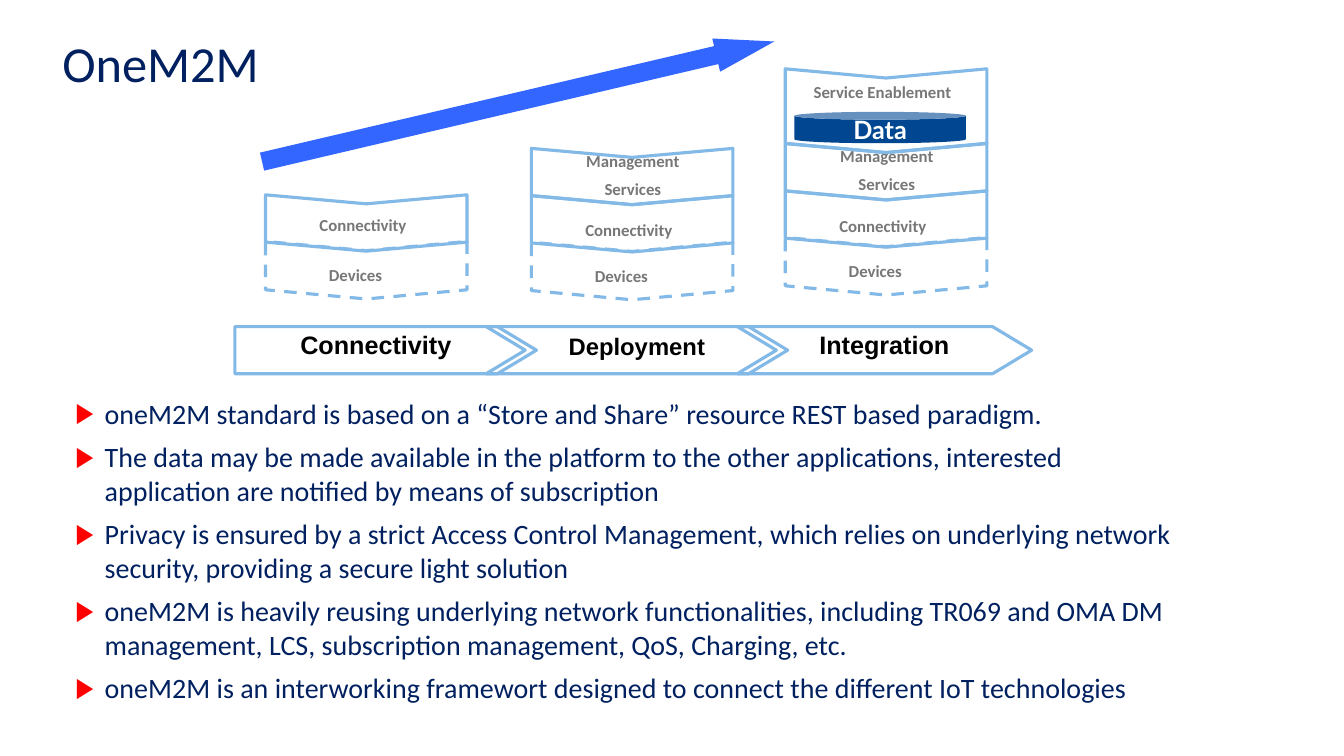
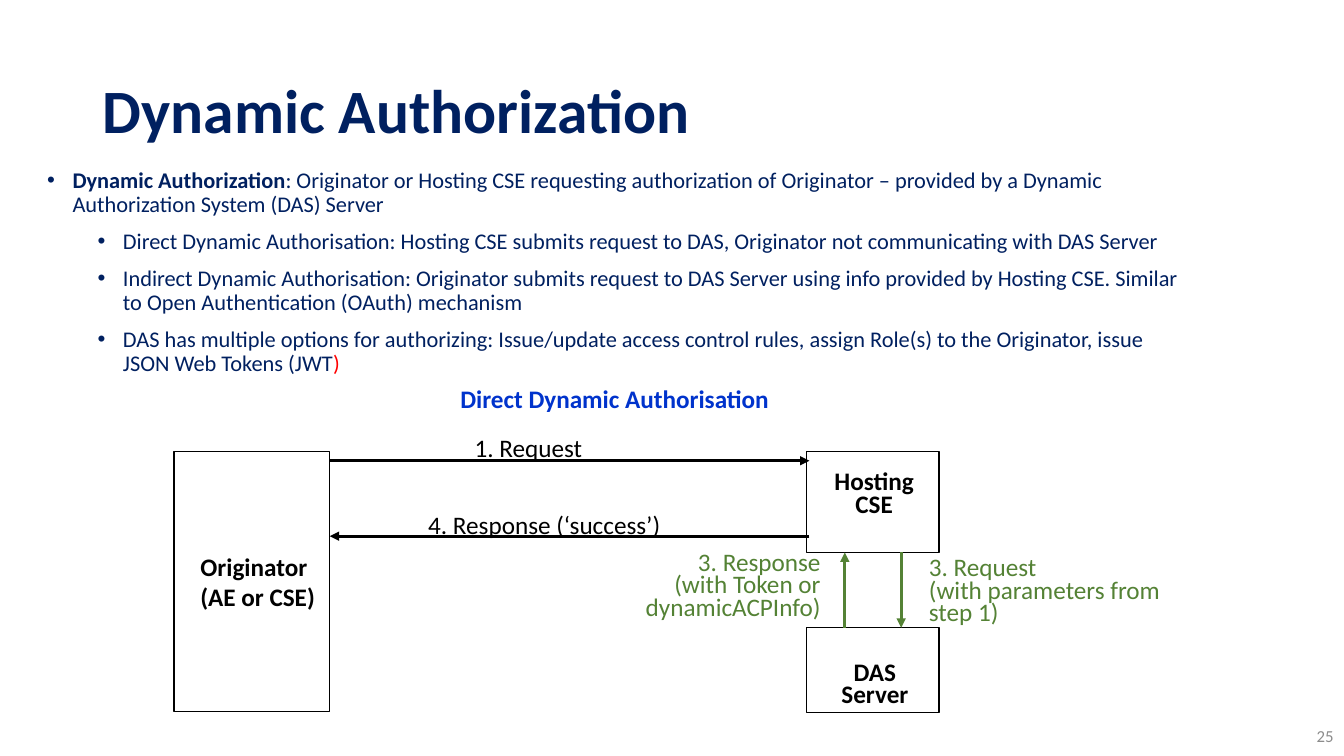
from pptx import Presentation
from pptx.dml.color import RGBColor as RGB
from pptx.enum.dml import MSO_LINE
from pptx.enum.shapes import MSO_CONNECTOR, MSO_SHAPE as SHAPE
from pptx.enum.text import MSO_ANCHOR as ANCHOR, PP_ALIGN as ALIGN
from pptx.oxml.ns import qn
from pptx.util import Cm, Pt
from lxml.etree import SubElement

NAVY = RGB(0x00, 0x20, 0x60)
SKY = RGB(0x82, 0xB9, 0xE6)
GRAY = RGB(0x77, 0x77, 0x77)
PALE = RGB(0x8C, 0x8C, 0x8C)
BLUE = RGB(0x33, 0x66, 0xFF)
DEEP = RGB(0x00, 0x46, 0x91)
ROYAL = RGB(0x00, 0x33, 0xCC)
GREEN = RGB(0x54, 0x82, 0x35)
RED = RGB(0xFF, 0x00, 0x00)
BLACK = RGB(0x00, 0x00, 0x00)
WHITE = RGB(0xFF, 0xFF, 0xFF)

# Text styles
TITLE = dict(size=Pt(36), color=NAVY)
BODY = dict(size=Pt(20), color=NAVY)
NOTE = dict(size=Pt(16), color=NAVY)
LABEL = dict(size=Pt(12), color=GRAY, bold=True)
STEP = dict(size=Pt(18), color=BLACK, bold=True, name="Arial")
CAN = dict(size=Pt(18), color=WHITE, bold=True, name="Lato")
PLAIN = dict(size=Pt(18), color=BLACK)
STRONG = dict(PLAIN, bold=True)
FLOW = dict(PLAIN, color=GREEN)
PAGE = dict(size=Pt(12), color=PALE)

MID = dict(alignment=ALIGN.CENTER)
SNUG = dict(MID, line_spacing=Pt(14), space_before=Pt(3), space_after=Pt(3))
DENSE = dict(line_spacing=Pt(16))

# Slide 1 content
POINTS = [
    "oneM2M standard is based on a “Store and Share” resource REST based paradigm.",
    "The data may be made available in the platform to the other applications, "
    "interested application are notified by means of subscription",
    "Privacy is ensured by a strict Access Control Management, which relies on "
    "underlying network security, providing a secure light solution",
    "oneM2M is heavily reusing underlying network functionalities, including TR069 "
    "and OMA DM management, LCS, subscription management, QoS, Charging, etc.",
    "oneM2M is an interworking framewort designed to connect the different IoT "
    "technologies",
]
# lines, rise above the lowest layer, height, notch, label shift x and y, label width
LAYERS = [
    (["Devices"], 0, 1.45, 0.16, -0.27, 0.12, 6.3),
    (["Connectivity"], 1.19, 1.42, 0.16, -0.08, 0.17, 4.9),
    (["Management", "Services"], 2.38, 1.42, 0.16, 0.02, -0.04, 4.65),
    (["Service Enablement"], 3.92, 2.11, 0.11, -0.09, -0.48, 6.27),
]
# centre x, centre y of the lowest layer, number of layers
STACKS = [(9.23, 6.81, 2), (15.93, 6.83, 3), (22.33, 6.71, 4)]
STEPS = [
    ("Connectivity", SHAPE.PENTAGON, 7.6, 18),
    ("Deployment", SHAPE.CHEVRON, 7.6, 17),
    ("Integration", SHAPE.CHEVRON, 7.42, 18),
]

# Slide 2 content: level and runs
NOTES = [
    (0, [("Dynamic Authorization", dict(bold=True)),
         (": Originator or Hosting CSE requesting authorization of Originator – "
          "provided by a Dynamic Authorization System (DAS) Server", {})]),
    (1, "Direct Dynamic Authorisation: Hosting CSE submits request to DAS, "
        "Originator not communicating with DAS Server"),
    (1, "Indirect Dynamic Authorisation: Originator submits request to DAS Server "
        "using info provided by Hosting CSE. Similar to Open Authentication (OAuth) "
        "mechanism"),
    (1, [("DAS has multiple options for authorizing: Issue/update access control "
          "rules, assign Role(s) to the Originator, issue JSON Web Tokens (JWT", {}),
         (")", dict(color=RED))]),
]
BOXES = [
    (4.39, 11.38, 3.91, 6.55),
    (20.32, 11.38, 3.35, 2.54),
    (20.32, 15.82, 3.35, 2.13),
]
# place, lines, font, paragraph format, wrap
TEXTS = [
    ((11.35, 9.53, 8.36, 1.02), ["Direct Dynamic Authorisation"],
     dict(STRONG, color=ROYAL), {}, False),
    ((4.8, 13.77, 3.5, 1.8), ["Originator", "(AE or CSE)"], STRONG, {}, False),
    ((20.53, 11.81, 3, 1.42), ["Hosting", "CSE"], STRONG, {**MID, **DENSE}, False),
    ((20.55, 16.61, 3, 1.42), ["DAS", "Server"], STRONG, {**MID, **DENSE}, False),
    ((11.71, 10.77, 3.38, 1.02), ["1. Request"], PLAIN, {}, False),
    ((10.54, 12.7, 6.5, 1.02), ["4. Response (‘success’)"], PLAIN, {}, False),
    ((23.16, 13.97, 6.99, 1.96), ["3. Request", "(with parameters from step 1)"],
     FLOW, DENSE, True),
    ((13.18, 13.84, 7.75, 1.98), ["3. Response", "(with Token or dynamicACPInfo)"],
     FLOW, dict(DENSE, alignment=ALIGN.RIGHT), True),
]
# start and tip of each arrow
ARROWS = [
    (8.31, 11.61, 20.4, 11.61, BLACK),
    (20.4, 13.51, 8.31, 13.51, BLACK),
    (22.71, 13.92, 22.71, 15.82, GREEN),
    (21.29, 15.82, 21.29, 13.92, GREEN),
]


def bullet(para, mark, left, hang, color=None):
    props = para._p.get_or_add_pPr()
    props.set("marL", str(Cm(left)))
    props.set("indent", str(-Cm(hang)))
    if color is not None:
        tint = SubElement(props, qn("a:buClr"))
        SubElement(tint, qn("a:srgbClr"), val=str(color))
    SubElement(props, qn("a:buFont"), typeface="Arial")
    SubElement(props, qn("a:buChar"), char=mark)


def write(shape, lines, font, form={}, anchor=ANCHOR.TOP, wrap=True, mark=None):
    """Fill a shape; a line is text, or a level with text or runs."""
    frame = shape.text_frame
    frame.word_wrap, frame.vertical_anchor = wrap, anchor
    for num, line in enumerate(lines):
        para = frame.add_paragraph() if num else frame.paragraphs[0]
        level, runs = line if isinstance(line, tuple) else (0, line)
        para.level = level
        if mark:
            bullet(para, **mark[level])
        for key, value in form.items():
            if num or key != "space_before":
                setattr(para, key, value)
        for text, extra in [(runs, {})] if isinstance(runs, str) else runs:
            run = para.add_run()
            run.text = text
            for key, value in {"name": "Calibri", **font, **extra}.items():
                if key == "color":
                    run.font.color.rgb = value
                else:
                    setattr(run.font, key, value)


def put(slide, place, *args, **kw):
    write(slide.shapes.add_textbox(*map(Cm, place)), *args, **kw)


def draw(slide, kind, place, fill=None, line=None, width=2.25, adjust=(), turn=0):
    shape = slide.shapes.add_shape(kind, *map(Cm, place))
    shape.shadow.inherit = False
    shape.rotation = turn
    for num, value in enumerate(adjust):
        shape.adjustments[num] = value
    for part, color in ((shape.fill, fill), (shape.line.fill, line)):
        if color is None:
            part.background()
        else:
            part.solid()
            part.fore_color.rgb = color
    if line is not None:
        shape.line.width = Pt(width)
    return shape


def around(x, y, w, h):
    return x - w / 2, y - h / 2, w, h


def title(slide, place, text, anchor, **extra):
    put(slide, place, [text], {**TITLE, **extra}, dict(line_spacing=0.9), anchor)


def arrow(slide, x1, y1, x2, y2, color):
    link = slide.shapes.add_connector(MSO_CONNECTOR.STRAIGHT,
                                      *map(Cm, (x1, y1, x2, y2)))
    link.line.color.rgb = color
    link.line.width = Pt(2.25)
    SubElement(link.line._get_or_add_ln(), qn("a:tailEnd"), type="triangle")
    SubElement(link._element.spPr, qn("a:effectLst"))


def growth(slide):
    title(slide, (1.32, 0.64, 20.57, 1.83), "OneM2M", ANCHOR.BOTTOM)

    # Layer stacks
    for x, base, count in STACKS:
        for num, layer in enumerate(LAYERS[:count]):
            lines, rise, high, notch, dx, dy, wide = layer
            y = base - rise
            tile = draw(slide, SHAPE.CHEVRON, around(x, y, high, 5.08), line=SKY,
                        adjust=[notch], turn=90)
            if num == 0:
                tile.line.dash_style = MSO_LINE.DASH
            if num == 1 and count == 2:
                dy = 0.05
            put(slide, around(x + dx, y + dy, wide, 0.8), lines, LABEL, SNUG,
                ANCHOR.MIDDLE)
    can = draw(slide, SHAPE.CAN, (20.02, 2.82, 4.32, 0.79), fill=DEEP, adjust=[0.25])
    write(can, ["Data"], CAN, MID, ANCHOR.MIDDLE, False)

    # Row of steps and rising arrow
    for num, (text, kind, wide, size) in enumerate(STEPS):
        step = draw(slide, kind, (5.92 + 6.33 * num, 8.23, wide, 1.19), line=SKY,
                    adjust=[0.83])
        write(step, [text], dict(STEP, size=Pt(size)), SNUG, ANCHOR.MIDDLE)
    draw(slide, SHAPE.RIGHT_ARROW, (6.43, 2.13, 13.26, 0.86), fill=BLUE,
         adjust=[0.54, 1.75], turn=-13.2)

    put(slide, (1.65, 9.86, 28.35, 5.49), POINTS, BODY, dict(space_before=Pt(7)),
        mark=[dict(mark="▶", left=0.74, hang=0.74, color=RED)])


def access(slide):
    title(slide, (2.34, 1.02, 29.21, 3.68), "Dynamic Authorization", ANCHOR.MIDDLE,
          size=Pt(44), bold=True)
    put(slide, (0.94, 4.14, 29.21, 13.51), NOTES, NOTE,
        dict(line_spacing=0.9, space_before=Pt(9)),
        mark=[dict(mark="•", left=left, hang=0.64) for left in (0.64, 1.91)])
    put(slide, (32.49, 18.03, 1.37, 1.02), ["25"], PAGE,
        dict(alignment=ALIGN.RIGHT), ANCHOR.MIDDLE)

    # Message flow
    for place in BOXES:
        draw(slide, SHAPE.RECTANGLE, place, line=BLACK, width=1)
    for ends in ARROWS:
        arrow(slide, *ends)
    for place, lines, font, form, wrap in TEXTS:
        put(slide, place, lines, font, form, wrap=wrap)


def main():
    deck = Presentation()
    deck.slide_width, deck.slide_height = Cm(33.87), Cm(19.05)
    for build in (growth, access):
        build(deck.slides.add_slide(deck.slide_layouts[6]))
    deck.save("out.pptx")


if __name__ == "__main__":
    main()
